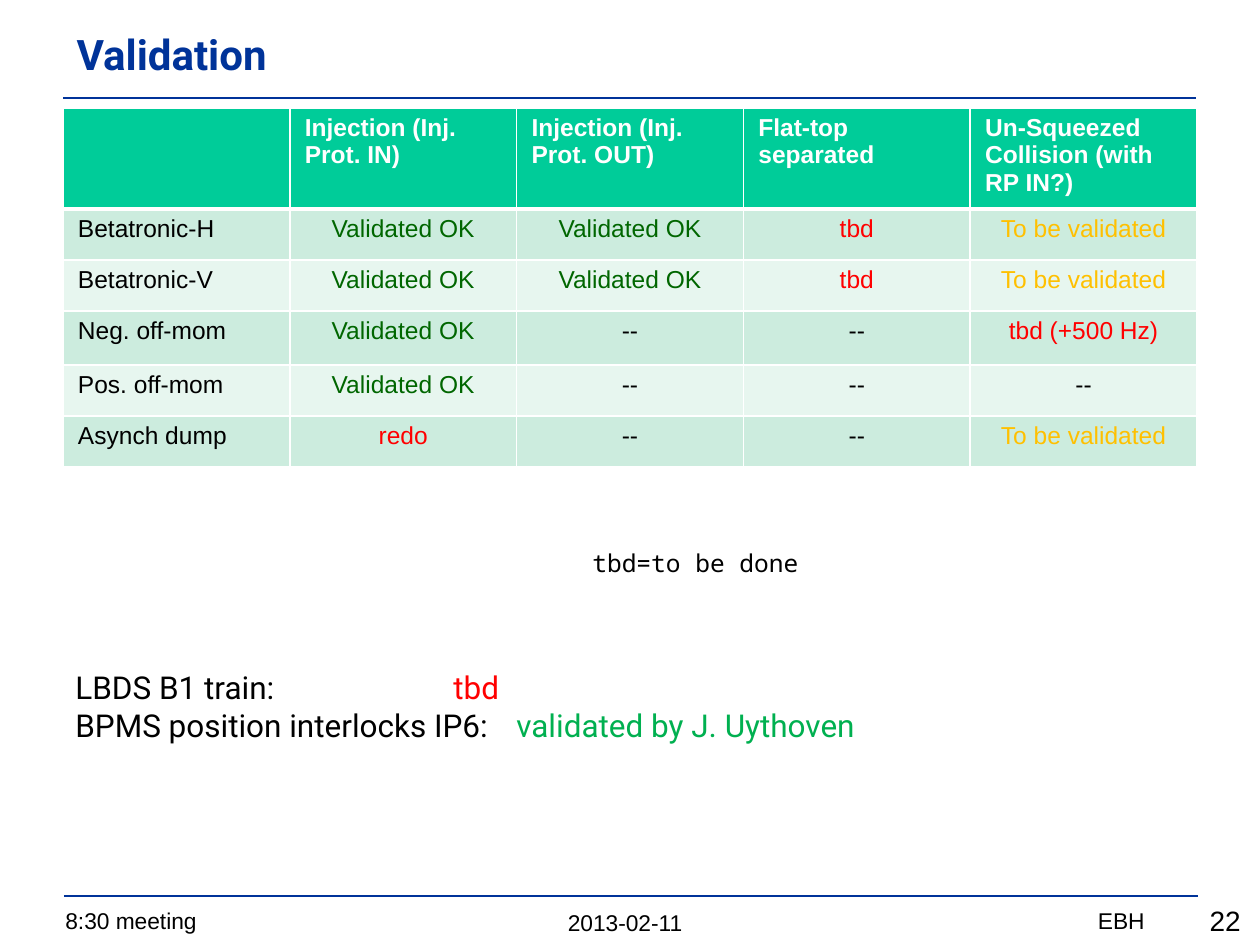
from lxml import etree
from pptx import Presentation
from pptx.dml.color import RGBColor
from pptx.enum.shapes import MSO_CONNECTOR
from pptx.enum.text import MSO_ANCHOR, PP_ALIGN
from pptx.oxml.ns import qn
from pptx.util import Emu, Pt

LEFT, MID, RIGHT = PP_ALIGN.LEFT, PP_ALIGN.CENTER, PP_ALIGN.RIGHT
STRAIGHT = MSO_CONNECTOR.STRAIGHT

NAVY = RGBColor(0x00, 0x33, 0x99)
BLACK = RGBColor(0x00, 0x00, 0x00)
WHITE = RGBColor(0xFF, 0xFF, 0xFF)
TEAL = RGBColor(0x00, 0xCC, 0x99)
MINT = RGBColor(0xCC, 0xEC, 0xDE)
PALE = RGBColor(0xE7, 0xF6, 0xEF)
DARK = RGBColor(0x00, 0x66, 0x00)
RED = RGBColor(0xFF, 0x00, 0x00)
AMBER = RGBColor(0xFF, 0xC0, 0x00)
GREEN = RGBColor(0x00, 0xB0, 0x50)

OK, TODO, LATER, NONE = "Validated OK", "tbd", "To be validated", "--"
HEADS = ["", "Injection (Inj. Prot. IN)", "Injection (Inj. Prot. OUT)",
         "Flat-top separated", "Un-Squeezed Collision (with RP IN?)"]
CHECKS = [
    ["Betatronic-H", OK, OK, TODO, LATER],
    ["Betatronic-V", OK, OK, TODO, LATER],
    ["Neg. off-mom", OK, NONE, NONE, "tbd (+500 Hz)"],
    ["Pos. off-mom", OK, NONE, NONE, NONE],
    ["Asynch dump", "redo", NONE, NONE, LATER],
]
STATE = {OK: DARK, TODO: RED, "tbd (+500 Hz)": RED, "redo": RED, LATER: AMBER}
ROWS = [101, 51, 51, 54, 51, 51]


def px(n):
    return Emu(round(n * 914400 / 126))


def place(shape, box):
    for key, n in zip(("left", "top", "width", "height"), box):
        setattr(shape, key, px(n))


def write(para, runs, align=LEFT, name="Arial", size=14, bold=False):
    """Fill a paragraph with (text, colour) runs."""
    para.alignment = align
    for text, color in runs:
        run = para.add_run()
        run.text = text
        form = {"name": name, "size": Pt(size), "bold": bold}
        for key, value in form.items():
            setattr(run.font, key, value)
        run.font.color.rgb = color


def add_text(slide, box, lines, **form):
    frame = slide.shapes.add_textbox(*map(px, box)).text_frame
    frame.word_wrap = True
    for i, runs in enumerate(lines):
        para = frame.add_paragraph() if i else frame.paragraphs[0]
        write(para, runs, **form)


def add_rule(slide, x, y, width):
    rule = slide.shapes.add_connector(STRAIGHT, px(x), px(y), px(x + width), px(y))
    rule.line.color.rgb = NAVY
    rule.line.width = Pt(1.5)
    etree.SubElement(rule._element.spPr, qn("a:effectLst"))


def add_title(slide, box):
    x, y, width, height = box
    title = slide.shapes.title
    place(title, box)
    title.text_frame.vertical_anchor = MSO_ANCHOR.MIDDLE
    write(title.text_frame.paragraphs[0], [("Validation", NAVY)],
          name="Roboto", size=24, bold=True)
    add_rule(slide, x - 1, y + height + 1, width)


def edge(cell, sides):
    """Draw white borders, given widths in points by side."""
    props = cell._tc.get_or_add_tcPr()
    for i, (side, width) in enumerate(sides.items()):
        line = etree.Element(qn("a:ln" + side), w=str(Pt(width)))
        fill = etree.SubElement(line, qn("a:solidFill"))
        etree.SubElement(fill, qn("a:srgbClr"), val=str(WHITE))
        props.insert(i, line)


def add_checks(slide, box):
    data = [HEADS] + CHECKS
    table = slide.shapes.add_table(len(data), len(HEADS), *map(px, box)).table
    for col in table.columns:
        col.width = px(box[2] / len(HEADS))
    for r, texts in enumerate(data):
        table.rows[r].height = px(ROWS[r])
        head = r == 0
        for c, text in enumerate(texts):
            cell = table.cell(r, c)
            cell.margin_left = cell.margin_right = px(15)
            cell.margin_top = cell.margin_bottom = px(6)
            cell.fill.solid()
            cell.fill.fore_color.rgb = TEAL if head else MINT if r % 2 else PALE
            edge(cell, {"L": 1, "R": 1, "T": 3 if r == 1 else 1, "B": 3 if head else 1})
            if text:
                color = WHITE if head else STATE.get(text, BLACK)
                write(cell.text_frame.paragraphs[0], [(text, color)],
                      align=LEFT if head or c == 0 else MID, bold=head)


def add_notes(slide, box):
    x, y, width, height = box
    add_text(slide, (x + 517, y, 615, 50), [[("tbd=to be done", BLACK)]],
             name="Noto Sans Mono")
    lines = [
        [("LBDS B1 train:\t\t\t", BLACK), ("tbd", RED)],
        [("BPMS position interlocks IP6:\t", BLACK),
         ("validated by J. Uythoven", GREEN)],
    ]
    add_text(slide, (x, y + height - 89, width, 89), lines, name="Roboto", size=18)


def add_foot(slide, box):
    x, y, width, height = box
    add_rule(slide, x + 11, y, width - 65)
    parts = [
        ("2013-02-11", 252, 7, 640, MID, 13),
        ("8:30 meeting", 0, 5, 466, LEFT, 13),
        ("EBH", 736, 5, 368, RIGHT, 13),
        ("22", 1055, 1, 145, RIGHT, 16),
    ]
    for text, dx, dy, wide, align, size in parts:
        add_text(slide, (x + dx, y + dy, wide, height - dy),
                 [[(text, BLACK)]], align=align, size=size)


def main():
    deck = Presentation()
    deck.slide_width, deck.slide_height = px(1260), px(945)
    slide = deck.slides.add_slide(deck.slide_layouts[5])
    add_foot(slide, (53, 896, 1199, 47))
    add_title(slide, (64, 11, 1133, 86))
    add_checks(slide, (63, 108, 1134, sum(ROWS)))
    add_notes(slide, (63, 542, 1134, 209))
    deck.save("out.pptx")


if __name__ == "__main__":
    main()
